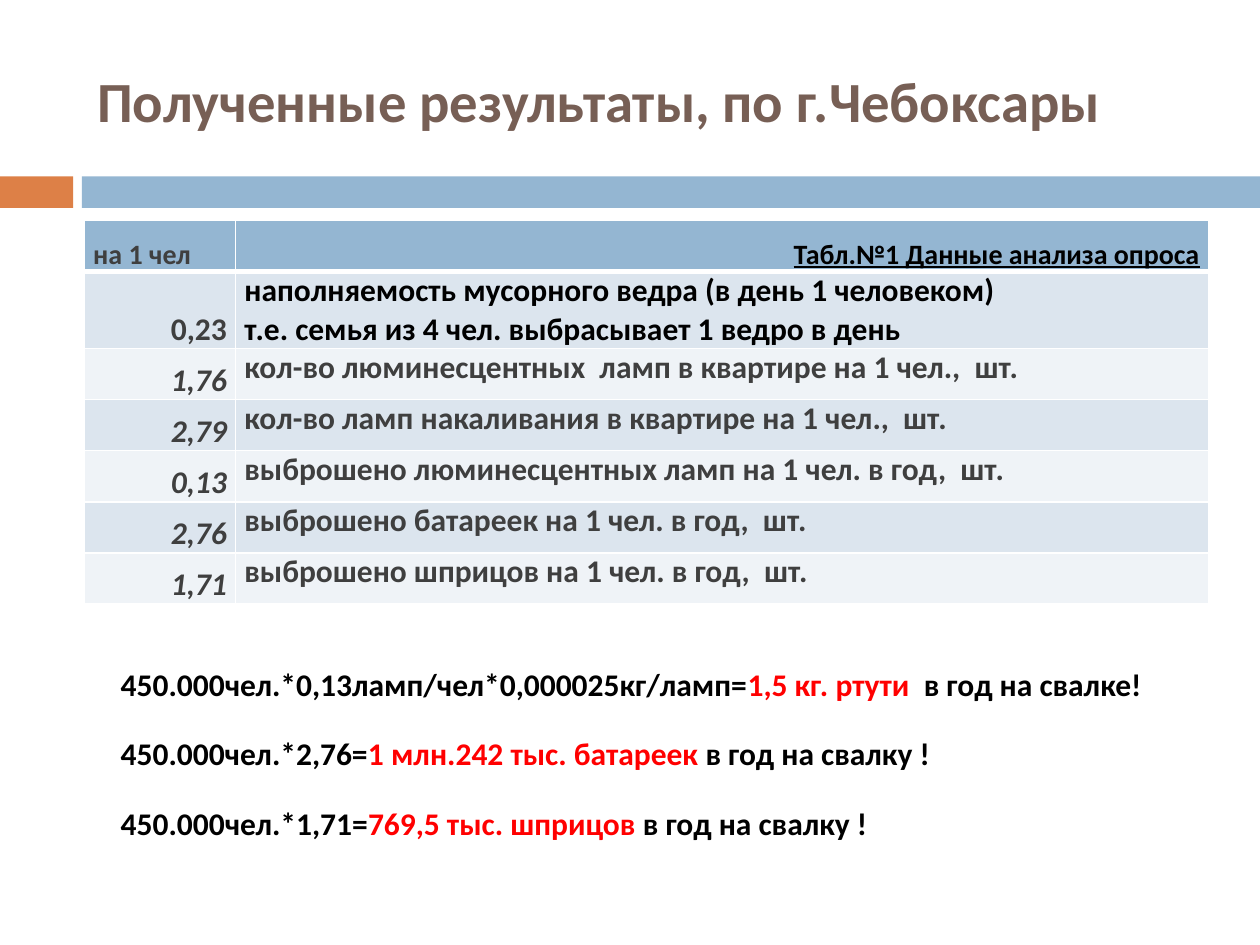
from lxml.etree import SubElement
from pptx import Presentation
from pptx.dml.color import RGBColor
from pptx.enum.shapes import MSO_SHAPE
from pptx.enum.text import MSO_ANCHOR, PP_ALIGN
from pptx.oxml.ns import qn
from pptx.util import Inches, Pt

THEME = {
    "font": "Calibri",
    "title_size": 32.4, "header_size": 16, "text_size": 18,
    "brown": "775F55", "orange": "DD8047", "blue": "94B6D2",
    "gray": "3F3F3F", "black": "000000", "red": "FF0000", "white": "FFFFFF",
    "bands": ("DCE5EE", "EFF3F7"),
}


def write_text(frame, *lines, size=THEME["text_size"], color=THEME["black"],
               align=PP_ALIGN.LEFT, anchor=MSO_ANCHOR.TOP, italic=False, underline=False):
    frame.word_wrap = True
    frame.vertical_anchor = anchor
    for index, line in enumerate(lines):
        para = frame.add_paragraph() if index else frame.paragraphs[0]
        para.alignment = align
        for text, span_color in ([(line, color)] if isinstance(line, str) else line):
            span = para.add_run()
            span.text = text
            span.font.name = THEME["font"]
            span.font.size = Pt(size)
            span.font.bold = True
            span.font.italic = italic
            span.font.underline = underline
            span.font.color.rgb = RGBColor.from_string(span_color)


def style_cell(cell, fill, top, bottom):
    cell.margin_left = cell.margin_right = Inches(0.07)
    cell.margin_top = cell.margin_bottom = 0
    properties = cell._tc.get_or_add_tcPr()
    for side, width in (("L", 1), ("R", 1), ("T", top), ("B", bottom)):
        line = SubElement(properties, qn(f"a:ln{side}"), w=str(Pt(width)))
        solid = SubElement(line, qn("a:solidFill"))
        SubElement(solid, qn("a:srgbClr"), val=THEME["white"])
    cell.fill.solid()
    cell.fill.fore_color.rgb = RGBColor.from_string(fill)


deck = Presentation()
deck.slide_width, deck.slide_height = Inches(10), Inches(7.5)
page = deck.slides.add_slide(deck.slide_layouts[5])
left, content_width = Inches(0.67), Inches(8.92)

for bar_left, bar_width, color in ((0, 0.58, "orange"), (0.65, 9.35, "blue")):
    bar = page.shapes.add_shape(MSO_SHAPE.RECTANGLE, Inches(bar_left), Inches(1.4),
                                Inches(bar_width), Inches(0.25))
    bar.shadow.inherit = False
    bar.fill.solid()
    bar.fill.fore_color.rgb = RGBColor.from_string(THEME[color])
    bar.line.fill.background()

title = page.shapes.title
title.left, title.top, title.width, title.height = left, Inches(0.25), content_width, Inches(1.08)
write_text(title.text_frame, "Полученные результаты, по г.Чебоксары",
           size=THEME["title_size"], color=THEME["brown"], anchor=MSO_ANCHOR.MIDDLE)

survey = (
    ("0,23", ("наполняемость мусорного ведра (в день 1 человеком)",
              "т.е. семья из 4 чел. выбрасывает 1 ведро в день")),
    ("1,76", ("кол-во люминесцентных  ламп в квартире на 1 чел.,  шт.",)),
    ("2,79", ("кол-во ламп накаливания в квартире на 1 чел.,  шт.",)),
    ("0,13", ("выброшено люминесцентных ламп на 1 чел. в год,  шт.",)),
    ("2,76", ("выброшено батареек на 1 чел. в год,  шт.",)),
    ("1,71", ("выброшено шприцов на 1 чел. в год,  шт.",)),
)
table = page.shapes.add_table(len(survey) + 1, 2, left, Inches(1.75),
                              content_width, Inches(2.84)).table
table.columns[0].width = Inches(1.2)
table.columns[1].width = content_width - Inches(1.2)

for cell in table.rows[0].cells:
    style_cell(cell, THEME["blue"], top=1, bottom=3)
write_text(table.cell(0, 0).text_frame, "на 1 чел",
           size=THEME["header_size"], color=THEME["gray"])
write_text(table.cell(0, 1).text_frame, "Табл.№1 Данные анализа опроса",
           size=THEME["header_size"], align=PP_ALIGN.RIGHT, underline=True)
for cell in table.rows[0].cells:
    cell.vertical_anchor = MSO_ANCHOR.BOTTOM

for row, (value, description) in enumerate(survey, start=1):
    first = row == 1
    value_cell, text_cell = table.rows[row].cells
    for cell in (value_cell, text_cell):
        style_cell(cell, THEME["bands"][(row - 1) % 2], top=3 if first else 1, bottom=1)
    write_text(value_cell.text_frame, value, color=THEME["gray"],
               align=PP_ALIGN.RIGHT, italic=not first)
    write_text(text_cell.text_frame, *description,
               color=THEME["black"] if first else THEME["gray"],
               align=PP_ALIGN.LEFT if first else PP_ALIGN.JUSTIFY)
    value_cell.vertical_anchor = MSO_ANCHOR.BOTTOM
    text_cell.vertical_anchor = MSO_ANCHOR.MIDDLE if first else MSO_ANCHOR.TOP

totals = (
    (8.75, "450.000чел.*0,13ламп/чел*0,000025кг/ламп=", "1,5 кг. ртути  ", "в год на свалке!"),
    (8.44, "450.000чел.*2,76=", "1 млн.242 тыс. батареек ", "в год на свалку !"),
    (7.89, "450.000чел.*1,71=", "769,5 тыс. шприцов ", "в год на свалку !"),
)
for index, (width, formula, result, ending) in enumerate(totals):
    box = page.shapes.add_textbox(Inches(0.86), Inches(5.23 + 0.55 * index),
                                  Inches(width), Inches(0.4))
    write_text(box.text_frame, [(formula, THEME["black"]), (result, THEME["red"]),
                                (ending, THEME["black"])])

deck.save("out.pptx")
